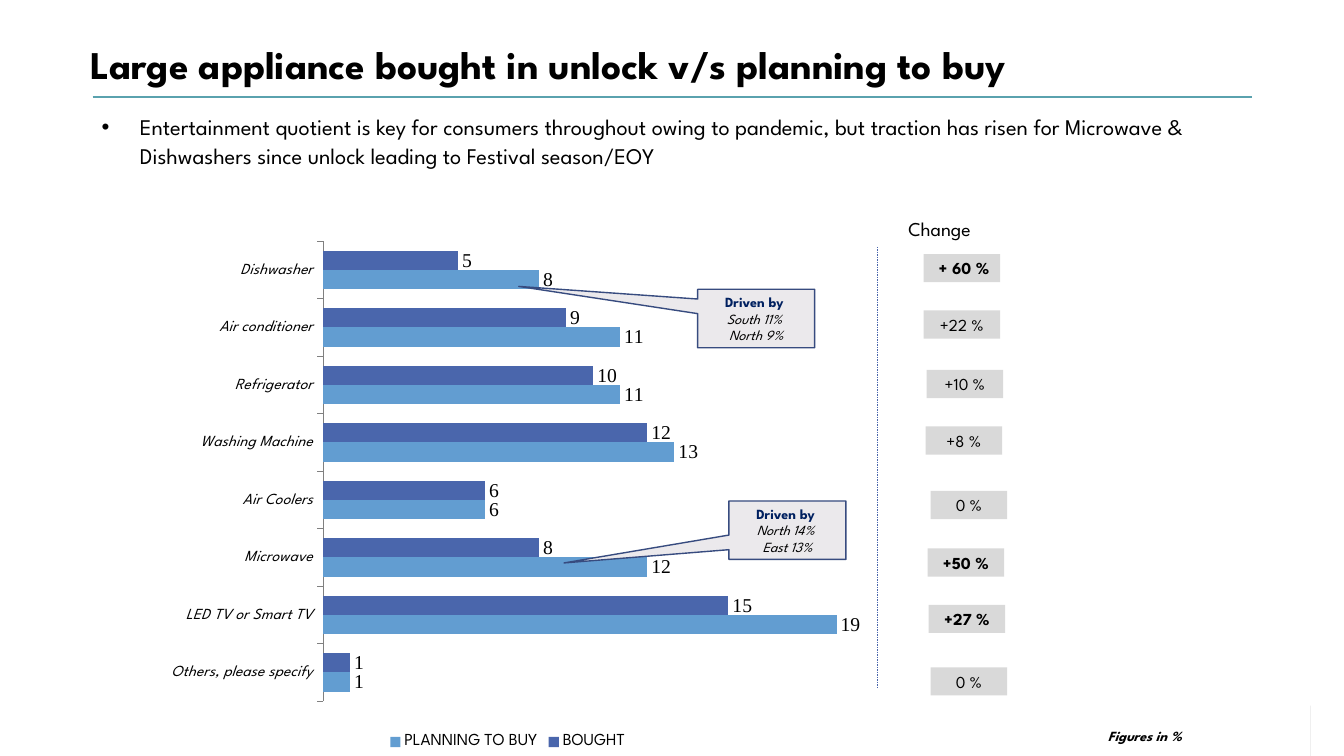
from lxml import etree
from pptx import Presentation
from pptx.chart.data import CategoryChartData
from pptx.dml.color import RGBColor
from pptx.enum.chart import XL_CHART_TYPE, XL_LABEL_POSITION, XL_LEGEND_POSITION, XL_TICK_LABEL_POSITION, XL_TICK_MARK
from pptx.enum.dml import MSO_LINE
from pptx.enum.shapes import MSO_CONNECTOR, MSO_SHAPE
from pptx.enum.text import MSO_ANCHOR, PP_ALIGN
from pptx.oxml import parse_xml
from pptx.oxml.ns import nsdecls, qn
from pptx.util import Inches, Pt

COLORS = {
    "black": "000000", "white": "FFFFFF", "gray": "808080", "tag": "D9D9D9",
    "rule": "5AA2AE", "bought": "4A66AC", "planning": "629DD1",
    "callout": "EBE9EC", "callout_line": "374B7F", "navy": "002060",
}
FONT = "League Spartan"
CATEGORIES = ["Dishwasher", "Air conditioner", "Refrigerator", "Washing Machine",
              "Air Coolers", "Microwave", "LED TV or Smart TV", "Others, please specify"]
SERIES = [("BOUGHT", [5, 9, 10, 12, 6, 8, 15, 1], "bought"),
          ("PLANNING TO BUY", [8, 11, 11, 13, 6, 12, 19, 1], "planning")]
CHANGES = [(9.16, 2.52, " + 60 %", True), (9.16, 3.08, "+22 %", False),
           (9.19, 3.67, "+10 %", False), (9.18, 4.23, "+8 %", False),
           (9.23, 4.87, "0 %", False), (9.2, 5.44, "+50 %", True),
           (9.21, 6, "+27 %", True), (9.23, 6.62, "0 %", False)]


def color(name):
    return RGBColor.from_string(COLORS[name])


def style_font(font, size, name="black", bold=False, italic=False, family=FONT):
    font.size = Pt(size)
    font.name = family
    font.bold = bold
    font.italic = italic
    font.color.rgb = color(name)


def style_paragraph(paragraph, *style, **options):
    for run in paragraph.runs:
        style_font(run.font, *style, **options)


def add_text(slide, box, text, size, align=PP_ALIGN.LEFT, anchor=MSO_ANCHOR.TOP, **options):
    shape = slide.shapes.add_textbox(*map(Inches, box))
    frame = shape.text_frame
    frame.word_wrap = True
    frame.vertical_anchor = anchor
    frame.text = text
    paragraph = frame.paragraphs[0]
    paragraph.alignment = align
    style_paragraph(paragraph, size, **options)
    return paragraph


def add_box(slide, preset, box, fill):
    shape = slide.shapes.add_shape(preset, *map(Inches, box))
    shape.shadow.inherit = False
    shape.fill.solid()
    shape.fill.fore_color.rgb = color(fill)
    shape.line.fill.background()
    return shape


def add_line(slide, start, end, name, width):
    line = slide.shapes.add_connector(MSO_CONNECTOR.STRAIGHT, *map(Inches, start + end))
    line.line.color.rgb = color(name)
    line.line.width = Pt(width)
    etree.SubElement(line._element.spPr, qn("a:effectLst"))
    return line


def curve(start, first, second, end, steps=8):
    weights = [((1 - t) ** 3, 3 * t * (1 - t) ** 2, 3 * t * t * (1 - t), t ** 3)
               for t in (step / steps for step in range(1, steps + 1))]
    return [tuple(sum(w * point[axis] for w, point in zip(weight, (start, first, second, end)))
                  for axis in (0, 1)) for weight in weights]


def add_page_number(slide, left, top, width, height):
    right, bottom = left + width, top + height
    start = (left + 0.38, top)
    points = curve(start, (left + 0.41, top), (left + 0.44, top + 0.01), (left + 0.47, top + 0.02))
    points += [(right, top + 0.04), (right, bottom), (left + 0.13, bottom), (left + 0.08, top + 0.55)]
    points += curve(points[-1], (left - 0.02, top + 0.45), (left - 0.02, top + 0.3), (left + 0.08, top + 0.2))
    points.append((left + 0.2, top + 0.08))
    points += curve(points[-1], (left + 0.25, top + 0.03), (left + 0.31, top), start)
    builder = slide.shapes.build_freeform(*start, scale=Inches(1))
    builder.add_line_segments(points, close=True)
    badge = builder.convert_to_shape()
    badge.shadow.inherit = False
    badge.fill.solid()
    badge.fill.fore_color.rgb = color("gray")
    badge.line.fill.background()
    add_text(slide, (right - 3, top + 0.18, 3, 0.4), "10", 12, PP_ALIGN.RIGHT,
             MSO_ANCHOR.MIDDLE, name="white", family="Lato")


def add_heading(slide, left, top, width):
    title = add_text(slide, (left, top, width, 0.71),
                     "Large appliance bought in unlock v/s planning to buy", 28,
                     anchor=MSO_ANCHOR.MIDDLE, bold=True)
    title.line_spacing = 0.9
    add_line(slide, (left + 0.12, top + 0.65), (left + 11.62, top + 0.65), "rule", 1.5)
    body = add_text(slide, (left + 0.11, top + 0.75, 11.7, 0.66),
                    "Entertainment quotient is key for consumers throughout owing to pandemic, "
                    "but traction has risen for Microwave & Dishwashers since unlock leading to "
                    "Festival season/EOY", 16, anchor=MSO_ANCHOR.MIDDLE)
    body.line_spacing = 1.07
    properties = body._p.get_or_add_pPr()
    properties.set("marL", str(Inches(0.38)))
    properties.set("indent", str(-Inches(0.38)))
    etree.SubElement(properties, qn("a:buFont")).set("typeface", "Arial")
    etree.SubElement(properties, qn("a:buChar")).set("char", "•")


def add_appliance_chart(slide, box):
    data = CategoryChartData()
    data.categories = CATEGORIES
    for name, values, _ in SERIES:
        data.add_series(name, values)
    chart = slide.shapes.add_chart(XL_CHART_TYPE.BAR_CLUSTERED, *map(Inches, box), data).chart
    style_font(chart.font, 18, family="Lato")
    chart.has_title = False
    chart.has_legend = True
    chart.legend.position = XL_LEGEND_POSITION.BOTTOM
    chart.legend.include_in_layout = False
    style_font(chart.legend.font, 12)

    categories = chart.category_axis
    categories.reverse_order = True
    categories.major_tick_mark = XL_TICK_MARK.OUTSIDE
    categories.tick_label_position = XL_TICK_LABEL_POSITION.LOW
    categories.format.line.color.rgb = color("gray")
    categories.format.line.width = Pt(0.75)
    style_font(categories.tick_labels.font, 11, italic=True)
    values = chart.value_axis
    values.minimum_scale, values.maximum_scale = 0, 20
    values.has_major_gridlines = False
    values.visible = False

    plot = chart.plots[0]
    plot.gap_width = 100
    plot.overlap = 0
    plot.vary_by_categories = False
    for series, (_, _, fill) in zip(plot.series, SERIES):
        series.format.fill.solid()
        series.format.fill.fore_color.rgb = color(fill)
        labels = series.data_labels
        labels.show_value = True
        labels.position = XL_LABEL_POSITION.OUTSIDE_END
        style_font(labels.font, 14, family="Times New Roman")

    plot_area = chart._chartSpace.chart.plotArea
    for layout in plot_area.findall(qn("c:layout")):
        plot_area.remove(layout)
    places = "".join(f'<c:{tag} val="{value}"/>' for tag, value in (
        ("layoutTarget", "inner"), ("xMode", "edge"), ("yMode", "edge"),
        ("x", 0.305), ("y", 0.018), ("w", 0.571), ("h", 0.881)))
    plot_area.insert(0, parse_xml(
        f'<c:layout {nsdecls("c")}><c:manualLayout>{places}</c:manualLayout></c:layout>'))


def add_callout(slide, left, top, pointer, regions):
    callout = add_box(slide, MSO_SHAPE.RECTANGULAR_CALLOUT, (left, top, 1.16, 0.58), "callout")
    callout.adjustments[0], callout.adjustments[1] = pointer
    callout.line.color.rgb = color("callout_line")
    callout.line.width = Pt(1)
    frame = callout.text_frame
    frame.vertical_anchor = MSO_ANCHOR.MIDDLE
    frame.text = "\n".join(["Driven by "] + regions)
    for index, paragraph in enumerate(frame.paragraphs):
        paragraph.alignment = PP_ALIGN.CENTER
        heading = index == 0
        style_paragraph(paragraph, 10, "navy" if heading else "black", bold=heading, italic=not heading)


def add_changes(slide, left, top):
    divider = add_line(slide, (left, top + 0.35), (left, top + 4.73), "bought", 0.25)
    divider.line.dash_style = MSO_LINE.DASH
    add_text(slide, (left + 0.21, top, 1.72, 0.34), "Change", 14)
    for tag_left, tag_top, text, bold in CHANGES:
        tag = add_box(slide, MSO_SHAPE.RECTANGLE, (tag_left, tag_top, 0.76, 0.28), "tag")
        frame = tag.text_frame
        frame.margin_left = frame.margin_right = frame.margin_top = frame.margin_bottom = Inches(0.04)
        frame.vertical_anchor = MSO_ANCHOR.TOP
        frame.text = text
        frame.paragraphs[0].alignment = PP_ALIGN.CENTER
        style_paragraph(frame.paragraphs[0], 12, bold=bold)


def main():
    presentation = Presentation()
    presentation.slide_width, presentation.slide_height = Inches(13.33), Inches(7.5)
    slide = presentation.slides.add_slide(presentation.slide_layouts[6])
    add_page_number(slide, 12.84, 6.91, 0.49, 0.59)
    add_appliance_chart(slide, (0.34, 2.3, 9.39, 5.18))
    add_heading(slide, 0.8, 0.31, 12.6)
    add_callout(slide, 7.23, 4.97, (-1.91, 0.56), ["North 14% ", "East 13%"])
    add_callout(slide, 6.92, 2.87, (-2.03, -0.55), ["South 11% ", "North 9%"])
    add_changes(slide, 8.7, 2.1)
    add_text(slide, (10.89, 7.17, 1.02, 0.27), "Figures in %", 10, bold=True, italic=True)
    presentation.save("out.pptx")


if __name__ == "__main__":
    main()
